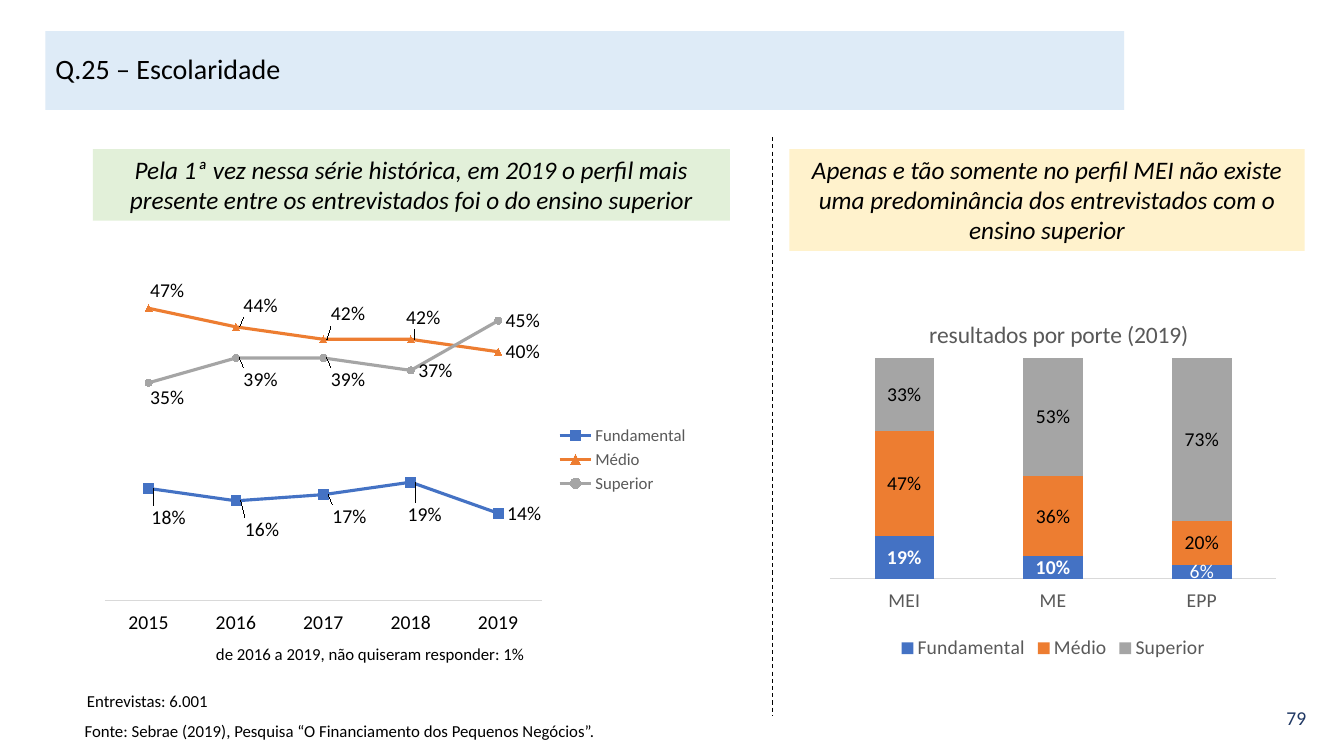
from dataclasses import dataclass

import pptx
import pptx.chart.data
import pptx.dml.color
import pptx.enum.chart
import pptx.enum.dml
import pptx.enum.shapes
import pptx.enum.text
import pptx.oxml
import pptx.oxml.ns
import pptx.util
from pptx.util import Inches, Pt

ALIGN = pptx.enum.text.PP_ALIGN
ANCHOR = pptx.enum.text.MSO_ANCHOR
XL = pptx.enum.chart
FONT = "Calibri"
GREY = "595959"
LEVELS = {"Fundamental": "4472C4", "Médio": "ED7D31", "Superior": "A5A5A5"}


@dataclass
class TextBox:
    text: str
    left: float
    top: float
    width: float
    height: float
    size: float = 12
    align: ALIGN = ALIGN.LEFT
    color: str = "000000"
    fill: str = ""
    italic: bool = False


@dataclass
class LineSeries:
    name: str
    values: tuple
    marker: XL.XL_MARKER_STYLE
    marker_size: int
    offsets: tuple  # label shifts, as fractions of the chart


TEXTS = [
    TextBox("79", 12.66, 6.95, 0.59, 0.4, 14, color="203864"),
    TextBox("Fonte: Sebrae (2019), Pesquisa “O Financiamento dos Pequenos Negócios”.",
            0.74, 7.1, 6.75, 0.3),
    TextBox("Entrevistas: 6.001", 0.45, 6.8, 1.71, 0.3, align=ALIGN.RIGHT),
    TextBox("de 2016 a 2019, não quiseram responder: 1%", 1.72, 6.34, 3.58, 0.3,
            align=ALIGN.RIGHT),
    TextBox("Apenas e tão somente no perfil MEI não existe uma predominância dos "
            "entrevistados com o ensino superior",
            7.83, 1.48, 5.11, 1.01, 18, ALIGN.CENTER, fill="FFF2CC", italic=True),
    TextBox("Pela 1ª vez nessa série histórica, em 2019 o perfil mais presente entre "
            "os entrevistados foi o do ensino superior",
            0.92, 1.48, 6.32, 0.71, 18, ALIGN.CENTER, fill="E2F0D9", italic=True),
]
YEARS = ("2015", "2016", "2017", "2018", "2019")
HISTORY = [
    LineSeries("Fundamental", (0.18, 0.16, 0.17, 0.19, 0.14), XL.XL_MARKER_STYLE.SQUARE, 7,
               ((-0.01, 0.08), (0, 0.08), (0, 0.06), (-0.02, 0.09))),
    LineSeries("Médio", (0.47, 0.44, 0.42, 0.42, 0.4), XL.XL_MARKER_STYLE.TRIANGLE, 5,
               ((-0.01, -0.05), (0, -0.06), (0, -0.07), (-0.02, -0.06))),
    LineSeries("Superior", (0.35, 0.39, 0.39, 0.37, 0.45), XL.XL_MARKER_STYLE.CIRCLE, 5,
               ((-0.01, 0.04), (0, 0.06), (0, 0.06))),
]
SIZES = ("MEI", "ME", "EPP")
BY_SIZE = {"Fundamental": (0.19, 0.1, 0.06), "Médio": (0.47, 0.36, 0.2),
           "Superior": (0.33, 0.53, 0.73)}


def rgb(color: str) -> pptx.dml.color.RGBColor:
    return pptx.dml.color.RGBColor.from_string(color)


def paint(fill, color: str) -> None:
    fill.solid()
    fill.fore_color.rgb = rgb(color)


def set_font(font, size: float, color: str, bold: bool = False) -> None:
    font.name, font.size, font.bold = FONT, Pt(size), bold
    font.color.rgb = rgb(color)


def box(item: TextBox) -> list:
    return [Inches(v) for v in (item.left, item.top, item.width, item.height)]


def add_text(s, item: TextBox) -> None:
    sp = s.shapes.add_textbox(*box(item))
    if item.fill:
        paint(sp.fill, item.fill)
    tf = sp.text_frame
    tf.word_wrap = True
    p = tf.paragraphs[0]
    p.alignment = item.align
    r = p.add_run()
    r.text = item.text
    set_font(r.font, item.size, item.color)
    r.font.italic = item.italic


def layout_xml(x: float, y: float, w: float = 0, h: float = 0, inner: bool = False):
    """Manual layout; edges and size for an inner plot, a plain x and y otherwise."""
    modes = ('<c:layoutTarget val="inner"/><c:xMode val="edge"/><c:yMode val="edge"/>'
             if inner else "")
    size = f'<c:w val="{w}"/><c:h val="{h}"/>' if inner else ""
    return pptx.oxml.parse_xml(
        f'<c:layout {pptx.oxml.ns.nsdecls("c")}><c:manualLayout>{modes}'
        f'<c:x val="{x}"/><c:y val="{y}"/>{size}</c:manualLayout></c:layout>')


def add_chart(s, kind, pos: tuple, cats: tuple, rows: dict, plot: tuple, top: float,
              legend_at, legend_size: float, axis_color: str, fmt: str):
    data = pptx.chart.data.CategoryChartData(number_format=fmt)
    data.categories = cats
    for name, values in rows.items():
        data.add_series(name, values)
    chart = s.shapes.add_chart(kind, *[Inches(v) for v in pos], data).chart
    set_font(chart.font, 10, "000000")
    chart.has_title = False
    chart.has_legend = True
    chart.legend.position = legend_at
    chart.legend.include_in_layout = False
    set_font(chart.legend.font, legend_size, GREY)

    cat, val = chart.category_axis, chart.value_axis
    cat.major_tick_mark = XL.XL_TICK_MARK.NONE
    cat.tick_label_position = XL.XL_TICK_LABEL_POSITION.LOW
    set_font(cat.tick_labels.font, 14, axis_color)
    cat.format.line.color.rgb = rgb("D9D9D9")
    cat.format.line.width = Pt(0.75)
    val.has_major_gridlines = False
    val.minimum_scale, val.maximum_scale = 0, top
    val.visible = False

    area = chart._chartSpace.chart.plotArea
    for old in area.findall(pptx.oxml.ns.qn("c:layout")):
        area.remove(old)
    area.insert(0, layout_xml(*plot, inner=True))
    return chart


def show_labels(series, color: str, fmt: str, bold: bool = False):
    labels = series.data_labels
    labels.show_value = True
    labels.number_format, labels.number_format_is_linked = fmt, False
    set_font(labels.font, 14, color, bold)
    return labels


def shift_label(series, index: int, offset: tuple, fmt: str) -> None:
    label = series.points[index].data_label
    set_font(label.font, 14, "000000")
    label.position = XL.XL_LABEL_POSITION.RIGHT
    dlbl = series._element.xpath(f'c:dLbls/c:dLbl[c:idx/@val="{index}"]')[0]
    dlbl.insert(1, layout_xml(*offset))
    dlbl.insert(2, pptx.oxml.parse_xml(
        f'<c:numFmt {pptx.oxml.ns.nsdecls("c")} formatCode="{fmt}" sourceLinked="0"/>'))


def add_history(s) -> None:
    fmt = "0%"
    chart = add_chart(s, XL.XL_CHART_TYPE.LINE_MARKERS, (0.92, 2.76, 6.02, 3.59), YEARS,
                      {h.name: h.values for h in HISTORY}, (0.02, 0.03, 0.72, 0.86), 0.5,
                      XL.XL_LEGEND_POSITION.RIGHT, 12, "000000", fmt)
    for series, row in zip(chart.plots[0].series, HISTORY):
        color = LEVELS[row.name]
        series.smooth = False
        series.format.line.color.rgb = rgb(color)
        series.format.line.width = Pt(2.25)
        series.marker.style, series.marker.size = row.marker, row.marker_size
        paint(series.marker.format.fill, color)
        series.marker.format.line.color.rgb = rgb(color)
        show_labels(series, "000000", fmt).position = XL.XL_LABEL_POSITION.RIGHT
        for i, offset in enumerate(row.offsets):
            shift_label(series, i, offset, fmt)


def add_by_size(s) -> None:
    fmt = "###0%"
    chart = add_chart(s, XL.XL_CHART_TYPE.COLUMN_STACKED, (8.09, 2.9, 4.71, 3.69), SIZES,
                      BY_SIZE, (0.03, 0.05, 0.94, 0.72), 1.2,
                      XL.XL_LEGEND_POSITION.BOTTOM, 14, GREY, fmt)
    title = chart.chart_title
    r = title.text_frame.paragraphs[0].add_run()
    r.text = "resultados por porte (2019)"
    set_font(r.font, 16.8, GREY)
    for old in title._element.findall(pptx.oxml.ns.qn("c:layout")):
        title._element.remove(old)
    title._element.insert(1, pptx.oxml.parse_xml(
        f'<c:layout {pptx.oxml.ns.nsdecls("c")}><c:manualLayout><c:xMode val="edge"/>'
        '<c:yMode val="edge"/><c:x val="0.23"/><c:y val="0.06"/></c:manualLayout></c:layout>'))

    plot = chart.plots[0]
    plot.vary_by_categories = False
    plot.gap_width, plot.overlap = 150, 100
    for series in plot.series:
        first = series.name == "Fundamental"
        paint(series.format.fill, LEVELS[series.name])
        show_labels(series, "FFFFFF" if first else "000000", fmt, first)
    set_font(plot.series[0].points[2].data_label.font, 14, "FFFFFF")


def main() -> None:
    prs = pptx.Presentation()
    prs.slide_width, prs.slide_height = Inches(13.33), Inches(7.5)
    s = prs.slides.add_slide(prs.slide_layouts[5])

    # Title band
    sp = s.shapes.title
    sp.left, sp.top, sp.width, sp.height = [Inches(v) for v in (0.45, 0.31, 10.7, 0.78)]
    paint(sp.fill, "DEEBF7")
    sp.text_frame.vertical_anchor = ANCHOR.MIDDLE
    p = sp.text_frame.paragraphs[0]
    p.alignment, p.line_spacing = ALIGN.LEFT, 0.9
    r = p.add_run()
    r.text = "Q.25 – Escolaridade"
    set_font(r.font, 20, "000000")

    # Dashed divider
    divider = s.shapes.add_connector(pptx.enum.shapes.MSO_CONNECTOR.STRAIGHT, Inches(7.66),
                                     Inches(1.36), Inches(7.66), Inches(7.1))
    divider.line.color.rgb = rgb("000000")
    divider.line.width = Pt(0.75)
    divider.line.dash_style = pptx.enum.dml.MSO_LINE.DASH
    divider._element.spPr.append(
        pptx.oxml.parse_xml(f'<a:effectLst {pptx.oxml.ns.nsdecls("a")}/>'))

    # Charts, then headings and notes
    add_history(s)
    add_by_size(s)
    for item in TEXTS:
        add_text(s, item)
    prs.save("out.pptx")


if __name__ == "__main__":
    main()
